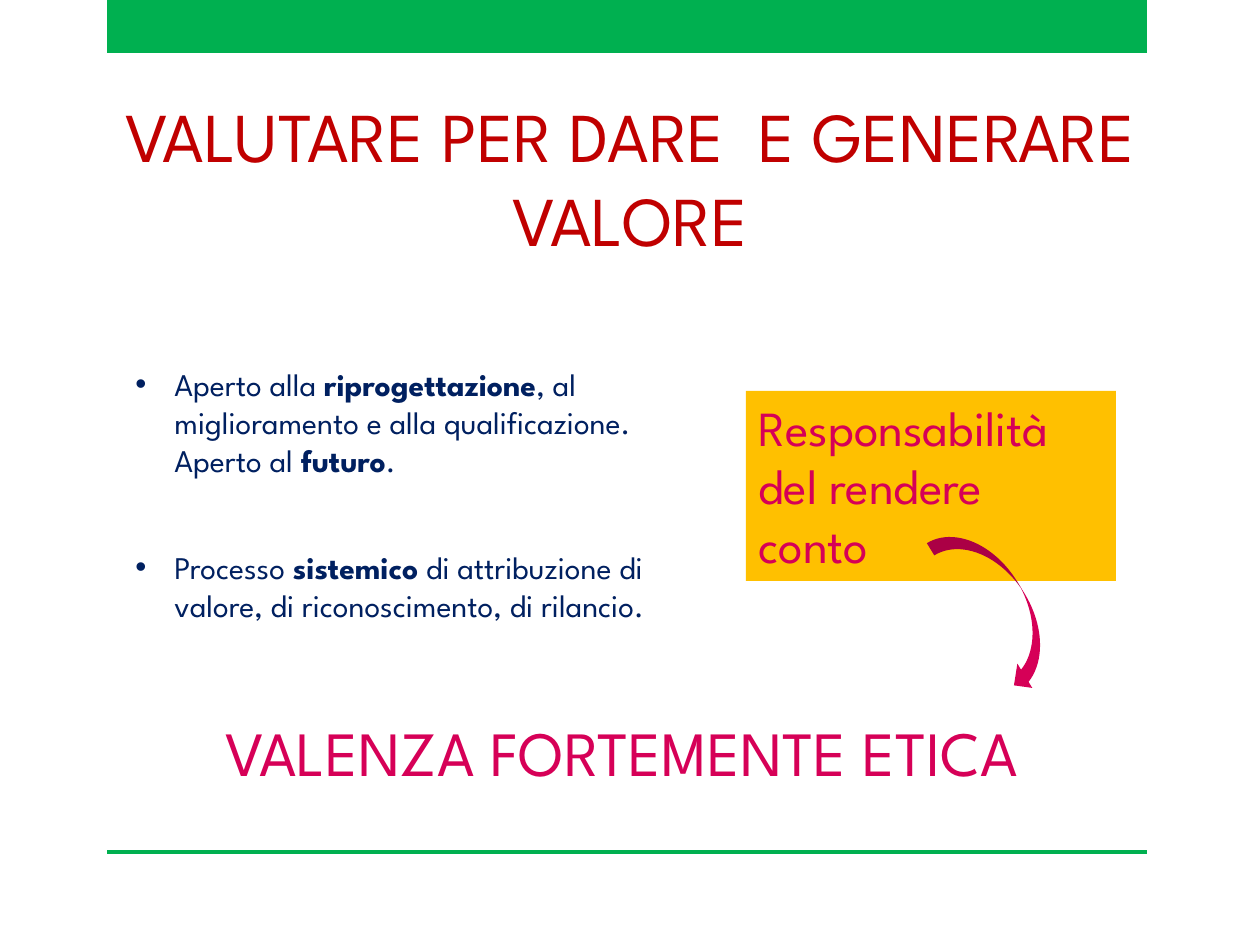
from lxml import etree
from pptx import Presentation
from pptx.dml.color import RGBColor
from pptx.enum.shapes import MSO_SHAPE
from pptx.enum.text import MSO_ANCHOR, PP_ALIGN
from pptx.oxml.ns import qn
from pptx.util import Emu, Pt

RECT = MSO_SHAPE.RECTANGLE
CURVED_ARROW = MSO_SHAPE.CURVED_RIGHT_ARROW
TOP = MSO_ANCHOR.TOP
LEFT, CENTER = PP_ALIGN.LEFT, PP_ALIGN.CENTER

PX_PER_INCH = 126
FONT = "League Spartan"
GREEN, RED, NAVY = "00B050", "C00000", "002060"
AMBER, MAGENTA, WHITE = "FFC000", "D60057", "FFFFFF"


def px(n):
    return Emu(round(n * 914400 / PX_PER_INCH))


def rgb(value):
    return RGBColor.from_string(value)


def add_shape(slide, box, fill, kind=RECT):
    sp = slide.shapes.add_shape(kind, *map(px, box))
    sp.shadow.inherit = False
    sp.fill.solid()
    sp.fill.fore_color.rgb = rgb(fill)
    sp.line.fill.background()
    return sp


def add_bullet(p, indent):
    pPr = p._p.get_or_add_pPr()
    pPr.set("marL", str(px(indent)))
    pPr.set("indent", str(-px(indent)))
    etree.SubElement(pPr, qn("a:buFont"), typeface="Arial")
    etree.SubElement(pPr, qn("a:buChar"), char="•")


def add_text(slide, box, runs, size, color, fill=None, align=LEFT,
             wrap=True, bullet=False):
    """Place one paragraph; every second run is bold."""
    if fill:
        sp = add_shape(slide, box, fill)
    else:
        sp = slide.shapes.add_textbox(*map(px, box))
    tf = sp.text_frame
    tf.word_wrap = wrap
    tf.vertical_anchor = TOP
    p = tf.paragraphs[0]
    p.alignment = align
    if bullet:
        add_bullet(p, 39)
    for i, text in enumerate(runs):
        r = p.add_run()
        r.text = text
        r.font.name = FONT
        r.font.size = Pt(size)
        r.font.bold = i % 2 == 1
        r.font.color.rgb = rgb(color)
    return sp


def add_frame(slide, x, y, w, h):
    # Thick band on top, thin rule at the bottom
    rule = 4
    add_shape(slide, (x, y, w, 53), GREEN)
    add_shape(slide, (x, y + h - rule, w, rule), GREEN)


def add_points(slide, x, y, w, points):
    # Bulleted statements at an even pitch
    pitch, height = 183, 127
    for i, runs in enumerate(points):
        add_text(slide, (x, y + i * pitch, w, height), runs, 18, NAVY,
                 bullet=True)


def add_conclusion(slide, x, y):
    # Highlighted box, closing statement and the arrow between them
    add_text(slide, (x + 533, y, 370, 190), ["Responsabilità del rendere conto"],
             28, MAGENTA, fill=AMBER)
    add_text(slide, (x, y + 316, 901, 89), ["VALENZA FORTEMENTE ETICA"],
             36, MAGENTA, fill=WHITE, wrap=False)
    arrow = add_shape(slide, (x + 757, y + 124, 57, 181), MAGENTA, CURVED_ARROW)
    arrow.rotation = 328.5
    arrow._element.spPr.find(qn("a:xfrm")).set("flipH", "1")


def main():
    prs = Presentation()
    prs.slide_width, prs.slide_height = px(1260), px(945)
    slide = prs.slides.add_slide(prs.slide_layouts[6])

    add_frame(slide, 107, 0, 1040, 854)
    add_text(slide, (54, 86, 1152, 183),
             ["VALUTARE PER DARE  E GENERARE VALORE"], 40, RED, align=CENTER)
    add_points(slide, 123, 359, 546, [
        ["Aperto alla ", "riprogettazione",
         ", al miglioramento e alla qualificazione. Aperto al ", "futuro", "."],
        ["Processo ", "sistemico",
         " di attribuzione di valore, di riconoscimento, di rilancio."],
    ])
    add_conclusion(slide, 213, 391)
    prs.save("out.pptx")


if __name__ == "__main__":
    main()
